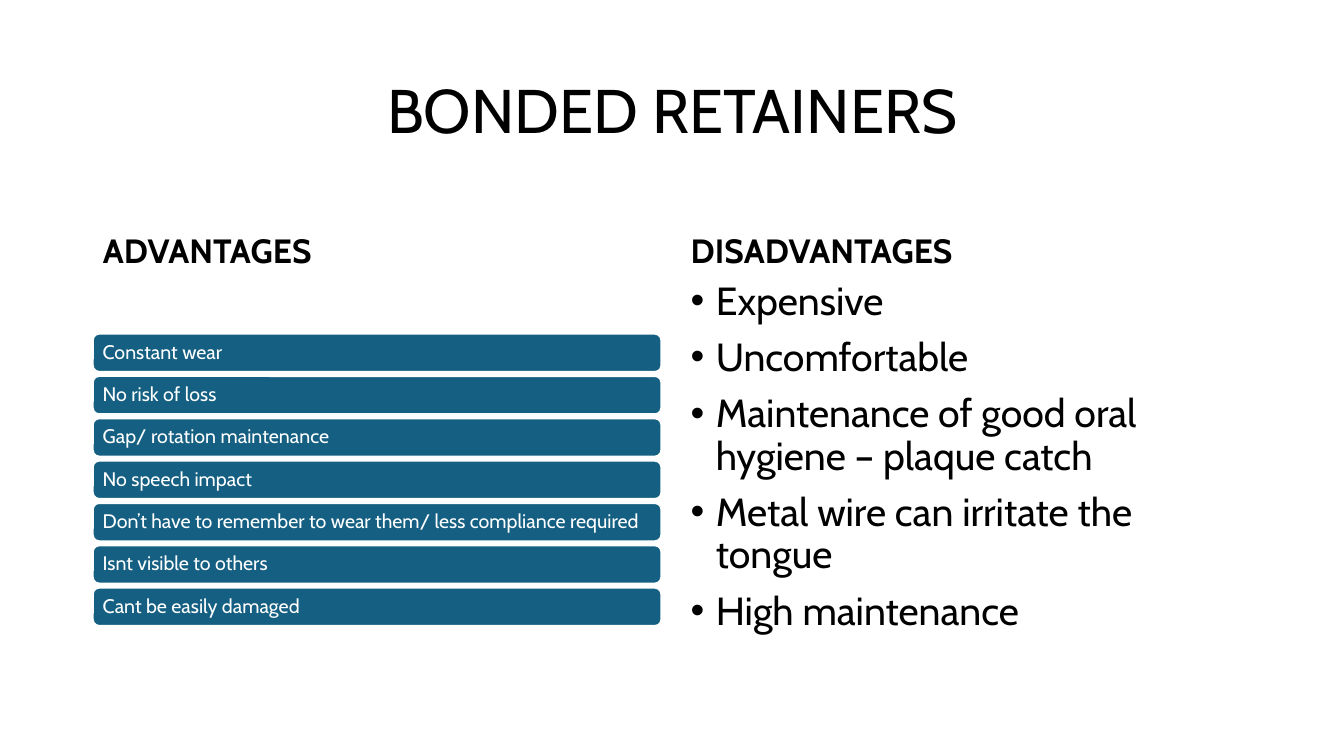
from lxml.etree import SubElement
from pptx import Presentation
from pptx.dml.color import RGBColor as RGB
from pptx.enum.shapes import MSO_SHAPE as SHAPE
from pptx.enum.text import MSO_ANCHOR as ANCHOR, MSO_AUTO_SIZE as FIT, PP_ALIGN as ALIGN
from pptx.oxml.ns import qn
from pptx.util import Emu, Pt

COLORS = {"text": "000000", "bar": "156082", "light": "FFFFFF"}
ADVANTAGES = [
    "Constant wear",
    "No risk of loss",
    "Gap/ rotation maintenance",
    "No speech impact",
    "Don’t have to remember to wear them/ less compliance required",
    "Isnt visible to others",
    "Cant be easily damaged",
]
DISADVANTAGES = [
    "Expensive",
    "Uncomfortable",
    "Maintenance of good oral hygiene – plaque catch",
    "Metal wire can irritate the tongue",
    "High maintenance",
]


def px(n):
    return Emu(n * 9144)


class Deck:
    """Slide builder that measures in px, 100 to the inch."""

    font = "Cabin"

    def __init__(self, width, height):
        self.prs = Presentation()
        self.prs.slide_width, self.prs.slide_height = px(width), px(height)
        self.s = self.prs.slides.add_slide(self.prs.slide_layouts[4])

    def set_text(self, sp, lines, size, color="text", bold=False, anchor=ANCHOR.TOP,
                 align=ALIGN.LEFT, before=0, inset=(10, 5)):
        tf = sp.text_frame
        x, y = map(px, inset)
        frame = dict(word_wrap=True, auto_size=FIT.NONE, vertical_anchor=anchor,
                     margin_left=x, margin_right=x, margin_top=y, margin_bottom=y)
        for key, value in frame.items():
            setattr(tf, key, value)
        tf.text = "\n".join(lines)
        para = dict(alignment=align, line_spacing=0.9, space_before=Pt(before), space_after=Pt(0))
        char = dict(name=self.font, size=Pt(size), bold=bold)
        for p in tf.paragraphs:
            for key, value in para.items():
                setattr(p, key, value)
            r = p.runs[0]
            for key, value in char.items():
                setattr(r.font, key, value)
            r.font.color.rgb = RGB.from_string(COLORS[color])

    def placeholder(self, idx, box, lines, size, **style):
        sp = next(ph for ph in self.s.placeholders if ph.placeholder_format.idx == idx)
        sp.left, sp.top, sp.width, sp.height = map(px, box)
        self.set_text(sp, lines, size, **style)
        return sp

    def heading(self, idx, box, text):
        self.placeholder(idx, box, [text], 24, bold=True, anchor=ANCHOR.BOTTOM, before=10)

    def bullets(self, idx, box, lines, size):
        sp = self.placeholder(idx, box, lines, size, before=10)
        for p in sp.text_frame.paragraphs:
            pPr = p._p.get_or_add_pPr()
            pPr.set("marL", str(px(25)))
            pPr.set("indent", str(px(-25)))
            SubElement(pPr, qn("a:buFont"), typeface="Arial")
            SubElement(pPr, qn("a:buChar"), char="•")

    def bar(self, box, text):
        sp = self.s.shapes.add_shape(SHAPE.ROUNDED_RECTANGLE, *map(px, box))
        sp.shadow.inherit = False
        sp.fill.solid()
        sp.fill.fore_color.rgb = RGB.from_string(COLORS["bar"])
        sp.line.color.rgb = RGB.from_string(COLORS["light"])
        sp.line.width = Pt(1.5)
        self.set_text(sp, [text], 14, color="light", anchor=ANCHOR.MIDDLE, inset=(8, 6))

    def drop_empty(self):
        for sp in list(self.s.placeholders):
            if not sp.text_frame.text:
                sp._element.getparent().remove(sp._element)

    def save(self):
        self.drop_empty()
        self.prs.save("out.pptx")


def main():
    deck = Deck(1333, 750)
    deck.placeholder(0, (92, 40, 1150, 145), ["BONDED RETAINERS"], 44,
                     anchor=ANCHOR.MIDDLE, align=ALIGN.CENTER)
    deck.heading(1, (92, 184, 564, 90), "ADVANTAGES")
    for i, text in enumerate(ADVANTAGES):
        deck.bar((92, 331 + 42 * i, 564, 38), text)
    deck.heading(3, (675, 184, 567, 90), "DISADVANTAGES")
    deck.bullets(4, (675, 274, 567, 403), DISADVANTAGES, 28)
    deck.save()


if __name__ == "__main__":
    main()
